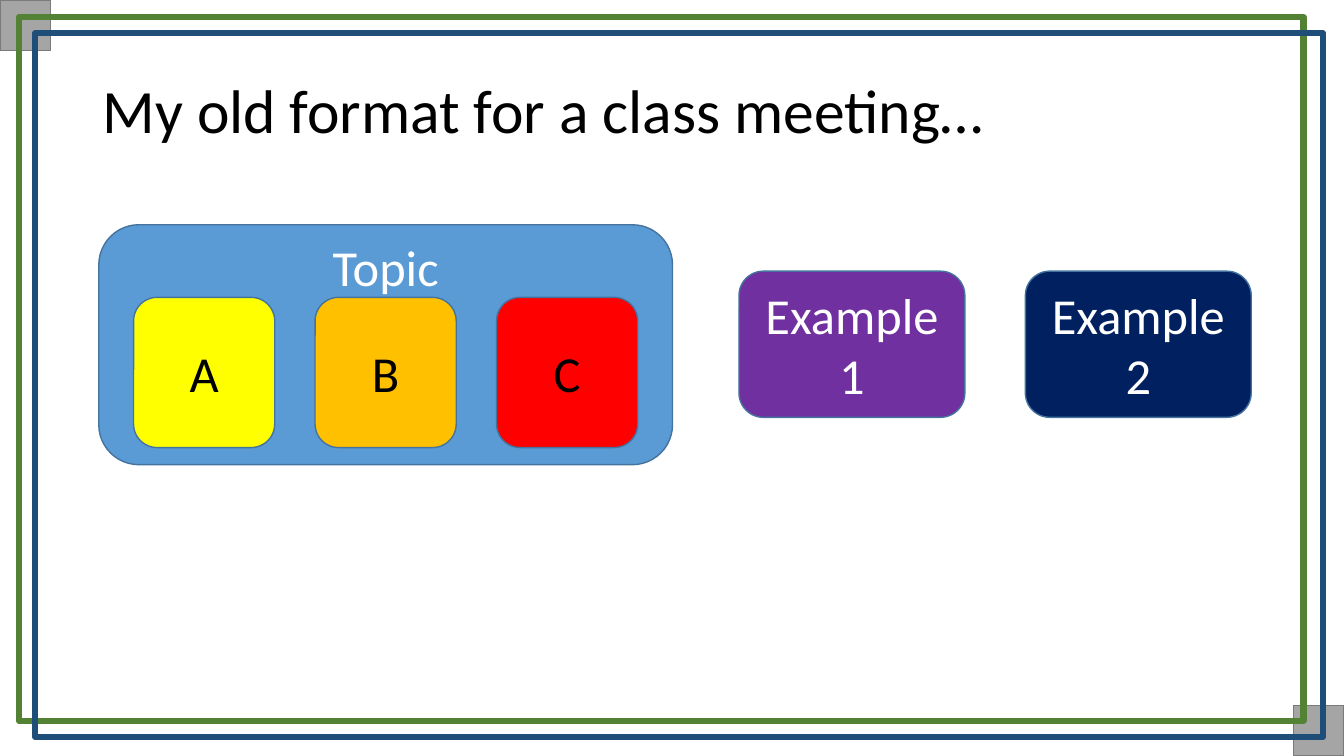
from pptx import Presentation
from pptx.dml.color import RGBColor
from pptx.enum.shapes import MSO_SHAPE as Shape
from pptx.enum.text import MSO_ANCHOR as Anchor, PP_ALIGN as Align
from pptx.util import Inches, Pt

TITLE = "My old format for a class meeting…"
TOPIC = "Topic"
PARTS = [("A", "FFFF00"), ("B", "FFC000"), ("C", "FF0000")]
EXAMPLES = [("Example 1", "7030A0"), ("Example 2", "002060")]

THEME = {
    "font": "Calibri", "title_size": 44, "label_size": 36,
    "dark": "000000", "light": "FFFFFF",
    "topic": "5B9BD5", "outline": "43739E",
    "corner": "A5A5A5", "corner_outline": "7A7A7A",
    "green_frame": "548235", "blue_frame": "1F4E79",
}

PAGE_WIDTH, PAGE_HEIGHT = 13.33, 7.5
CORNER = 0.5
FRAMES = [((0.19, 0.17, 12.74, 6.98), "green_frame"),
          ((0.35, 0.33, 12.77, 6.98), "blue_frame")]
TITLE_AREA = (0.92, 0.4, 11.5, 1.45)
TOPIC_AREA = (0.98, 2.23, 5.69, 2.38)
PART_TOP, PART_WIDTH, PART_HEIGHT, PART_STEP = 2.95, 1.4, 1.49, 1.8
EXAMPLE_LEFT, EXAMPLE_TOP, EXAMPLE_STEP = 7.33, 2.69, 2.84
EXAMPLE_WIDTH, EXAMPLE_HEIGHT = 2.24, 1.45


def color(code):
    return RGBColor.from_string(code)


def add_box(shapes, kind, area, fill, line, line_width=1):
    box = shapes.add_shape(kind, *map(Inches, area))
    box.shadow.inherit = False
    if fill:
        box.fill.solid()
        box.fill.fore_color.rgb = color(fill)
    else:
        box.fill.background()
    box.line.color.rgb = color(line)
    box.line.width = Pt(line_width)
    return box


def write(box, text, size, ink, align=Align.CENTER, anchor=Anchor.MIDDLE):
    frame = box.text_frame
    frame.word_wrap = True
    frame.vertical_anchor = anchor
    para = frame.paragraphs[0]
    para.text = text
    para.alignment = align
    para.font.name = THEME["font"]
    para.font.size = Pt(size)
    para.font.color.rgb = color(ink)
    return para


def add_card(shapes, area, text, fill, ink, anchor=Anchor.MIDDLE):
    card = add_box(shapes, Shape.ROUNDED_RECTANGLE, area, fill, THEME["outline"])
    write(card, text, THEME["label_size"], ink, anchor=anchor)
    return card


deck = Presentation()
deck.slide_width, deck.slide_height = Inches(PAGE_WIDTH), Inches(PAGE_HEIGHT)
page = deck.slides.add_slide(deck.slide_layouts[6])

# Corner squares and overlapping frames
for left, top in [(0, 0), (PAGE_WIDTH - CORNER, PAGE_HEIGHT - CORNER)]:
    add_box(page.shapes, Shape.RECTANGLE, (left, top, CORNER, CORNER),
            THEME["corner"], THEME["corner_outline"])
for area, line in FRAMES:
    add_box(page.shapes, Shape.RECTANGLE, area, None, THEME[line], 4.5)

# Title
title = page.shapes.add_textbox(*map(Inches, TITLE_AREA))
title_para = write(title, TITLE, THEME["title_size"], THEME["dark"], Align.LEFT)
title_para.line_spacing = 0.9

# Topic with its parts, centred across the panel
group = page.shapes.add_group_shape()
topic = add_card(group.shapes, TOPIC_AREA, TOPIC, THEME["topic"],
                 THEME["light"], Anchor.TOP)
topic.text_frame.margin_top = topic.text_frame.margin_bottom = 0
parts_width = PART_STEP * (len(PARTS) - 1) + PART_WIDTH
parts_left = TOPIC_AREA[0] + (TOPIC_AREA[2] - parts_width) / 2
for index, (label, fill) in enumerate(PARTS):
    area = (parts_left + index * PART_STEP, PART_TOP, PART_WIDTH, PART_HEIGHT)
    add_card(group.shapes, area, label, fill, THEME["dark"])

# Examples
for index, (label, fill) in enumerate(EXAMPLES):
    area = (EXAMPLE_LEFT + index * EXAMPLE_STEP, EXAMPLE_TOP,
            EXAMPLE_WIDTH, EXAMPLE_HEIGHT)
    add_card(page.shapes, area, label, fill, THEME["light"])

deck.save("out.pptx")
